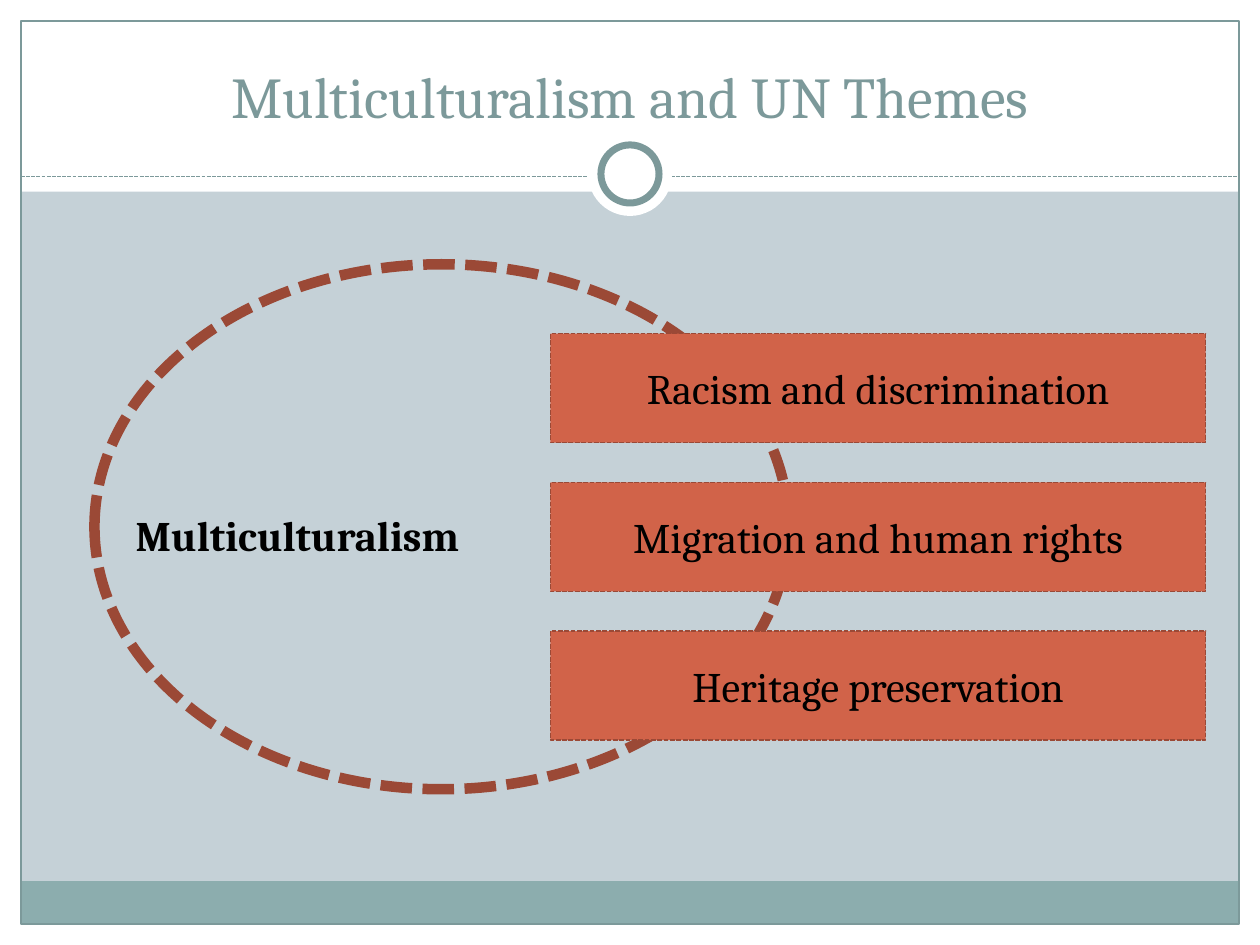
from pptx import Presentation
from pptx.dml.color import RGBColor
from pptx.enum.dml import MSO_LINE
from pptx.enum.shapes import MSO_CONNECTOR, MSO_SHAPE
from pptx.enum.text import MSO_ANCHOR, MSO_AUTO_SIZE, PP_ALIGN
from pptx.oxml.ns import qn
from pptx.util import Pt

TITLE = "Multiculturalism and UN Themes"
TOPIC = "Multiculturalism"
UN_THEMES = [
    "Racism and discrimination",
    "Migration and human rights",
    "Heritage preservation",
]

THEME = {
    "font": "Cambria",
    "title_size": 33,
    "text_size": 24,
    "background": "C5D1D7",
    "paper": "FFFFFF",
    "frame": "7C999A",
    "footer": "8CADAE",
    "box": "D16349",
    "outline": "9B4936",
    "text": "000000",
}

WIDTH, HEIGHT, MARGIN = 720, 540, 12
HEADER_HEIGHT, DIVIDER_Y = 109.5, 100.8
FOOTER_HEIGHT = 24.5
BADGE_CENTER_Y = 99.4
BADGE_DIAMETER, RING_DIAMETER = 48, 33.2
BOX_LEFT, BOX_TOP, BOX_WIDTH, BOX_HEIGHT, BOX_PITCH = 314.5, 190.6, 374.5, 62.4, 85


def color(name):
    return RGBColor.from_string(THEME[name])


def style_line(line, name, width, dashed=False):
    line.color.rgb = color(name)
    line.width = Pt(width)
    if dashed:
        line.dash_style = MSO_LINE.SQUARE_DOT


def add_shape(slide, kind, left, top, width, height, fill=None, line=None):
    """Add a flat shape; line holds the arguments of style_line."""
    shape = slide.shapes.add_shape(kind, Pt(left), Pt(top), Pt(width), Pt(height))
    shape.shadow.inherit = False
    if fill:
        shape.fill.solid()
        shape.fill.fore_color.rgb = color(fill)
    else:
        shape.fill.background()
    if line:
        style_line(shape.line, *line)
    else:
        shape.line.fill.background()
    return shape


def set_text(shape, text, size, name, align, bold=False):
    shape.text_frame.text = text
    paragraph = shape.text_frame.paragraphs[0]
    paragraph.alignment = align
    paragraph.font.name = THEME["font"]
    paragraph.font.size = Pt(THEME[size])
    paragraph.font.bold = bold
    paragraph.font.color.rgb = color(name)


def add_frame(slide):
    inner_width, inner_height = WIDTH - 2 * MARGIN, HEIGHT - 2 * MARGIN
    borders = [
        (0, HEIGHT - MARGIN, WIDTH, MARGIN),
        (0, 0, WIDTH, HEADER_HEIGHT),
        (0, 0, MARGIN, HEIGHT),
        (WIDTH - MARGIN, 0, MARGIN, HEIGHT),
    ]
    for border in borders:
        add_shape(slide, MSO_SHAPE.RECTANGLE, *border, fill="paper")
    add_shape(slide, MSO_SHAPE.RECTANGLE, MARGIN, HEIGHT - MARGIN - FOOTER_HEIGHT,
              inner_width, FOOTER_HEIGHT, fill="footer")
    add_shape(slide, MSO_SHAPE.RECTANGLE, MARGIN, MARGIN, inner_width, inner_height,
              line=("frame", 0.75))

    divider = slide.shapes.add_connector(
        MSO_CONNECTOR.STRAIGHT, Pt(MARGIN), Pt(DIVIDER_Y), Pt(WIDTH - MARGIN), Pt(DIVIDER_Y))
    style_line(divider.line, "frame", 0.75, dashed=True)
    properties = divider.element.spPr
    properties.append(properties.makeelement(qn("a:effectLst"), {}))

    for diameter, line in [(BADGE_DIAMETER, None), (RING_DIAMETER, ("frame", 4))]:
        add_shape(slide, MSO_SHAPE.OVAL, (WIDTH - diameter) / 2,
                  BADGE_CENTER_Y - diameter / 2, diameter, diameter, "paper", line)


def add_title(slide):
    title = slide.shapes.title
    title.left, title.top, title.width, title.height = Pt(24), Pt(18), Pt(672), Pt(60)
    set_text(title, TITLE, "title_size", "frame", PP_ALIGN.CENTER)
    title.text_frame.vertical_anchor = MSO_ANCHOR.BOTTOM
    # The header band must lie behind the title
    title.element.getparent().append(title.element)


def add_diagram(slide):
    add_shape(slide, MSO_SHAPE.OVAL, 54, 151, 396.5, 300, line=("outline", 6, True))

    label = slide.shapes.add_textbox(Pt(70.5), Pt(287.5), Pt(227), Pt(36))
    set_text(label, TOPIC, "text_size", "text", PP_ALIGN.LEFT, bold=True)
    label.text_frame.word_wrap = False
    label.text_frame.auto_size = MSO_AUTO_SIZE.SHAPE_TO_FIT_TEXT

    for index, theme_name in enumerate(UN_THEMES):
        box = add_shape(slide, MSO_SHAPE.RECTANGLE, BOX_LEFT, BOX_TOP + index * BOX_PITCH,
                        BOX_WIDTH, BOX_HEIGHT, "box", ("outline", 0.9, True))
        set_text(box, theme_name, "text_size", "text", PP_ALIGN.CENTER)
        box.text_frame.vertical_anchor = MSO_ANCHOR.MIDDLE


def main():
    presentation = Presentation()
    presentation.slide_width, presentation.slide_height = Pt(WIDTH), Pt(HEIGHT)
    slide = presentation.slides.add_slide(presentation.slide_layouts[5])
    slide.background.fill.solid()
    slide.background.fill.fore_color.rgb = color("background")
    add_frame(slide)
    add_title(slide)
    add_diagram(slide)
    presentation.save("out.pptx")


if __name__ == "__main__":
    main()
